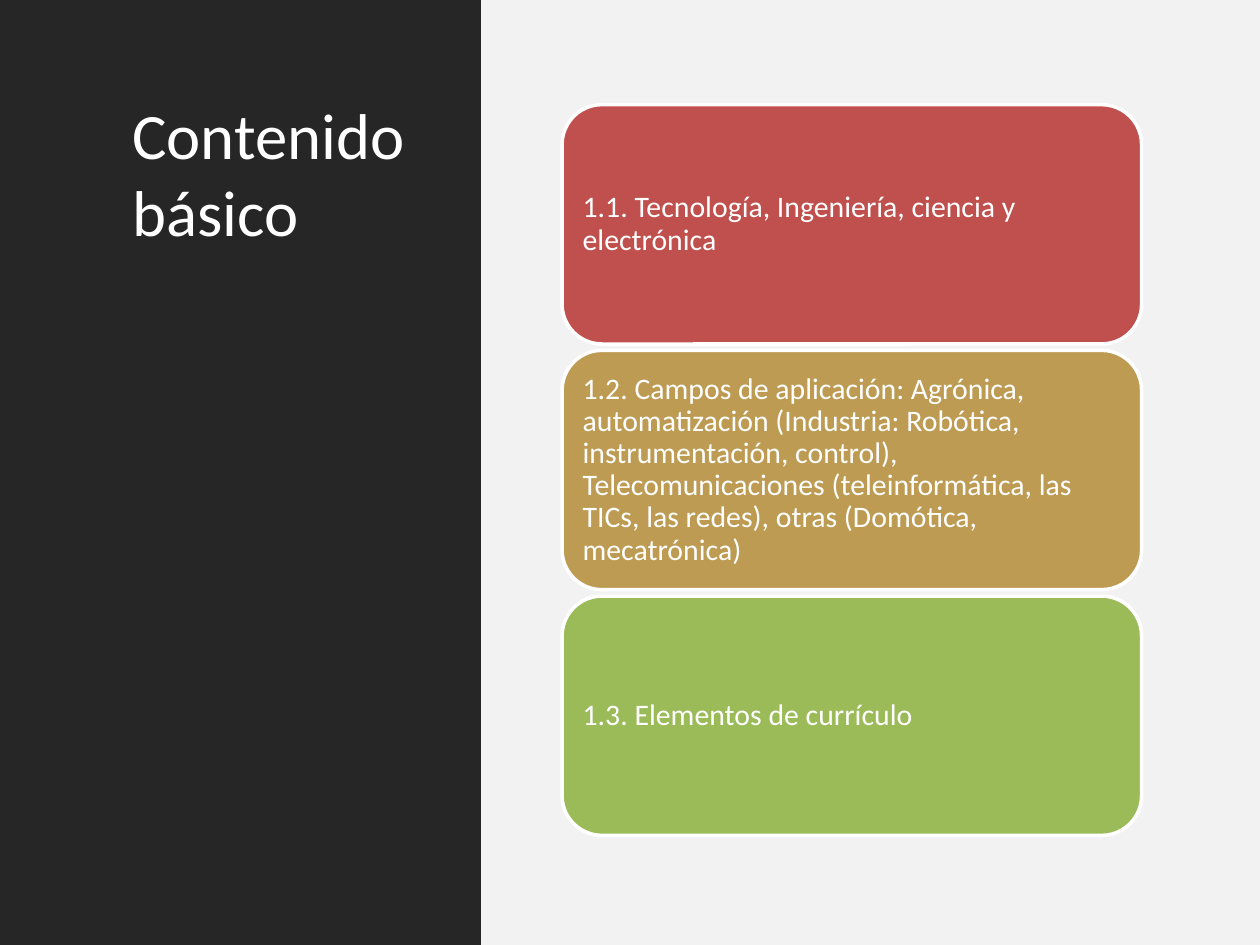
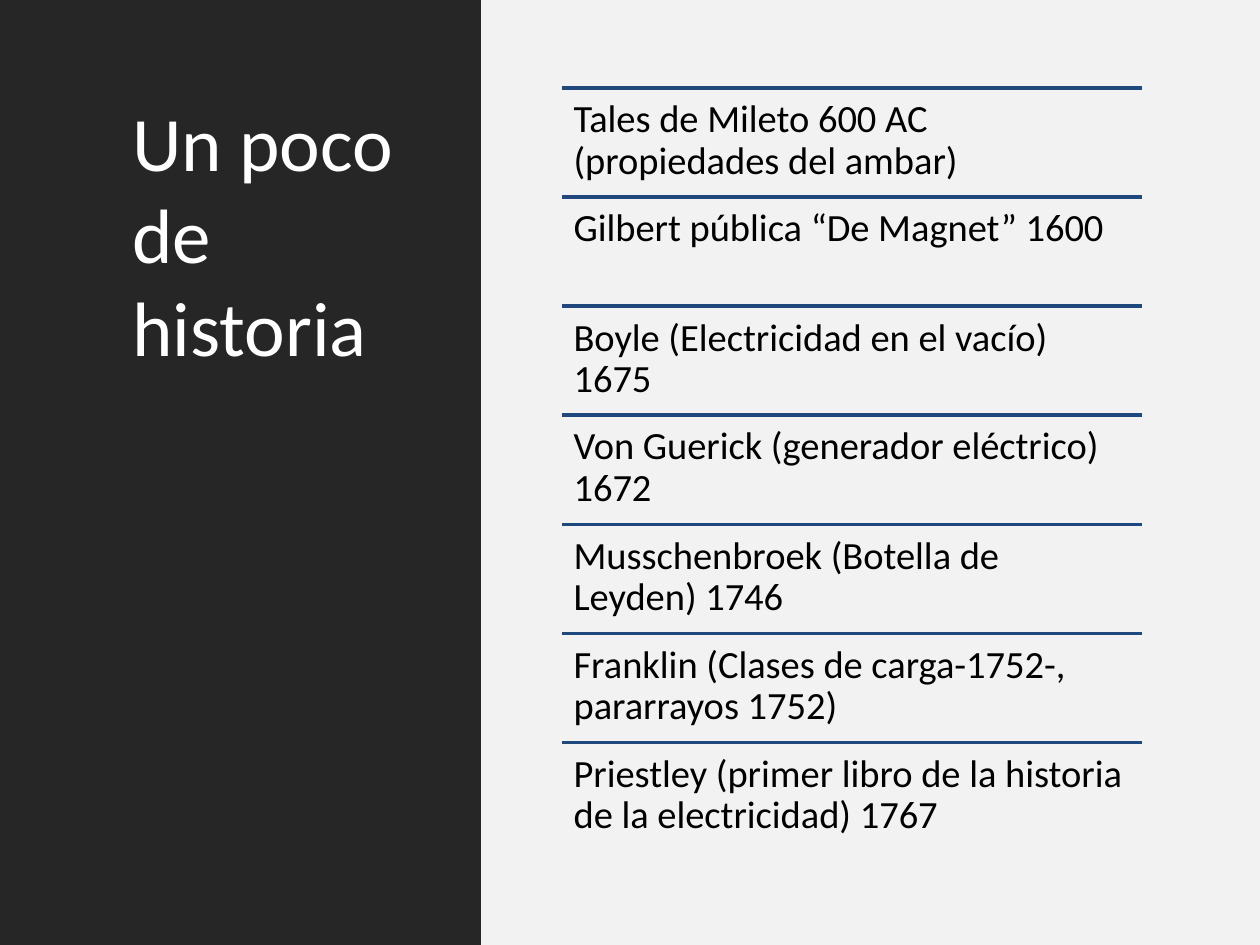
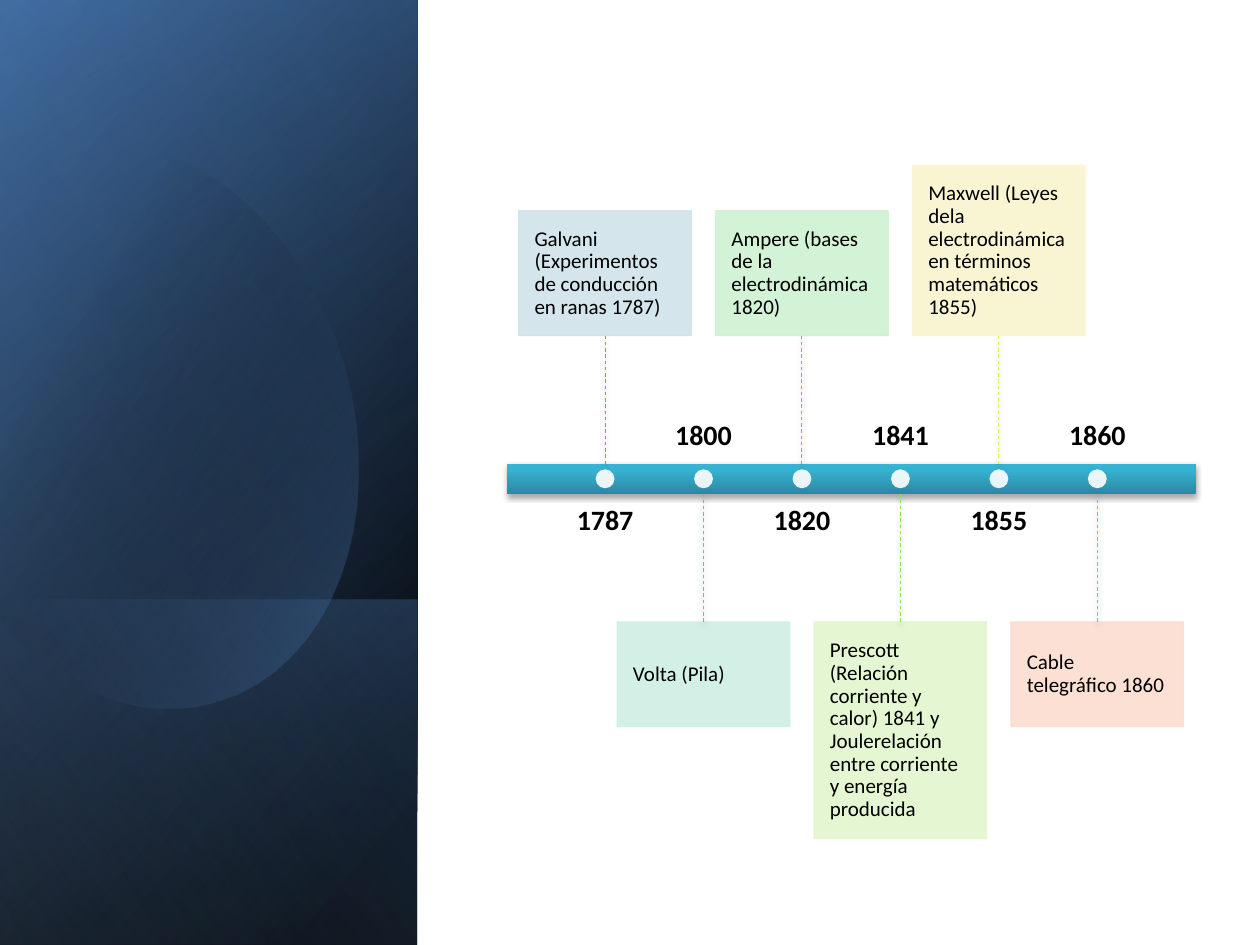
from collections import namedtuple

from lxml import etree
from pptx import Presentation
from pptx.dml.color import RGBColor
from pptx.enum.dml import MSO_LINE
from pptx.enum.shapes import MSO_CONNECTOR, MSO_SHAPE
from pptx.enum.text import MSO_ANCHOR, MSO_AUTO_SIZE, PP_ALIGN
from pptx.oxml.ns import qn
from pptx.util import Pt

RECTANGLE = MSO_SHAPE.RECTANGLE
ROUNDED = MSO_SHAPE.ROUNDED_RECTANGLE
OVAL = MSO_SHAPE.OVAL
STRAIGHT = MSO_CONNECTOR.STRAIGHT
DASH = MSO_LINE.DASH
TOP, MIDDLE, BOTTOM = MSO_ANCHOR.TOP, MSO_ANCHOR.MIDDLE, MSO_ANCHOR.BOTTOM
LEFT, CENTER = PP_ALIGN.LEFT, PP_ALIGN.CENTER
NO_AUTOFIT = MSO_AUTO_SIZE.NONE

Box = namedtuple("Box", "left top width height")

FONT = "Calibri"
BLACK, WHITE = "000000", "FFFFFF"
DARK, PALE, NAVY, BLUE = "262626", "F2F2F2", "1F497D", "4F81BD"
TITLE_ONLY, BLANK = 5, 6

WIDTH, HEIGHT = 720, 540
BAND_WIDTH = 275
TITLE_BOX = Box(68.4, 50.4, 171.4, 439.2)
CARDS_BOX = Box(321.2, 59.8, 331.2, 417.6)
HISTORY_BOX = Box(321.2, 50.4, 331.2, 436.1)
SIDE_BOX = Box(0, 0, 238.5, HEIGHT)
AXIS_BOX = Box(289.5, 265, 393.8, 17.2)

CARDS = [
    ("1.1. Tecnología, Ingeniería, ciencia y electrónica", "C0504D"),
    ("1.2. Campos de aplicación: Agrónica, automatización (Industria: Robótica, "
     "instrumentación, control), Telecomunicaciones (teleinformática, las TICs, "
     "las redes), otras (Domótica, mecatrónica)", "BD9B53"),
    ("1.3. Elementos de currículo", "9BBB59"),
]
HISTORY = [
    "Tales de Mileto 600 AC (propiedades del ambar)",
    "Gilbert pública “De Magnet” 1600",
    "Boyle (Electricidad en el vacío) 1675",
    "Von Guerick (generador eléctrico) 1672",
    "Musschenbroek (Botella de Leyden) 1746",
    "Franklin (Clases de carga-1752-, pararrayos 1752)",
    "Priestley (primer libro de la historia de la electricidad) 1767",
]
EVENTS = [
    ("1787", "Galvani (Experimentos de conducción en ranas 1787)", 71.3, "D0E3EA", "4BACC6"),
    ("1800", "Volta (Pila)", 59.8, "CFEFE5", "49D1A3"),
    ("1820", "Ampere (bases de la electrodinámica 1820)", 71.3, "CFF2D2", "47DC57"),
    ("1841", "Prescott (Relación corriente y calor) 1841 y Joulerelación entre "
             "corriente y energía producida", 123.8, "E2F6CE", "8DE646"),
    ("1855", "Maxwell (Leyes dela electrodinámica en términos matemáticos 1855)",
     97.2, "F9F5CF", "EEEF46"),
    ("1860", "Cable telegráfico 1860", 59.8, "FCDDCF", "F79646"),
]
SWOOSH_START = (69, 82)
SWOOSH_CURVES = [
    ((123, 88), (176, 138), (196.5, 209)),
    ((221, 297), (189, 382), (123, 401)),
    ((82, 413), (38, 396), (5, 360)),
    ((5, 360), (-2, 351), (-2, 351)),
    ((-2, 351), (-18, 119.5), (-18, 119.5)),
    ((-18, 119.5), (-11, 111), (-11, 111)),
    ((1.5, 98.5), (16, 90), (32.5, 85)),
    ((44.5, 81.5), (57, 81), (69, 82)),
]


def color(value):
    return RGBColor.from_string(value)


def lengths(box):
    return [Pt(value) for value in box]


def add_alpha(color_element, percent):
    etree.SubElement(color_element, qn("a:alpha"), val=str(percent * 1000))


def add_effects(shape):
    return etree.SubElement(shape.element.spPr, qn("a:effectLst"))


def add_soft_shadow(shape):
    shadow = etree.SubElement(add_effects(shape), qn("a:outerShdw"), blurRad=str(Pt(3.1)),
                              dist=str(Pt(1.8)), dir="5400000", rotWithShape="0")
    add_alpha(etree.SubElement(shadow, qn("a:srgbClr"), val=BLACK), 35)


def fill_gradient(shape, angle, stops):
    shape.fill.gradient()
    shape.fill.gradient_angle = (360 - angle) % 360
    stop_list = shape.element.spPr.find(".//" + qn("a:gsLst"))
    for old_stop in list(stop_list):
        stop_list.remove(old_stop)
    for position, value, alpha in stops:
        stop = etree.SubElement(stop_list, qn("a:gs"), pos=str(position * 1000))
        add_alpha(etree.SubElement(stop, qn("a:srgbClr"), val=value), alpha)


def add_block(slide, kind, box, fill, line=None, line_width=0.75, alpha=100):
    shape = slide.shapes.add_shape(kind, *lengths(box))
    shape.fill.solid()
    shape.fill.fore_color.rgb = color(fill)
    if line:
        shape.line.color.rgb = color(line)
        shape.line.width = Pt(line_width)
    else:
        shape.line.fill.background()
    if alpha < 100:
        for color_element in shape.element.spPr.iter(qn("a:srgbClr")):
            add_alpha(color_element, alpha)
    shape.shadow.inherit = False
    return shape


def add_line(slide, start, end, value, width):
    points = [Pt(value) for value in start + end]
    line = slide.shapes.add_connector(STRAIGHT, *points)
    line.line.color.rgb = color(value)
    line.line.width = Pt(width)
    return line


def write(shape, text, size, value=BLACK, inset=0, anchor=TOP, align=LEFT, bold=False, spacing=0.9):
    frame = shape.text_frame
    frame.word_wrap = True
    frame.auto_size = NO_AUTOFIT
    frame.vertical_anchor = anchor
    frame.margin_left = frame.margin_right = Pt(inset)
    frame.margin_top = frame.margin_bottom = Pt(inset)
    paragraph = frame.paragraphs[0]
    paragraph.alignment = align
    paragraph.line_spacing = spacing
    run = paragraph.add_run()
    run.text = text
    run.font.name = FONT
    run.font.size = Pt(size)
    run.font.bold = bold
    run.font.color.rgb = color(value)


def add_text(slide, box, text, size, **style):
    write(slide.shapes.add_textbox(*lengths(box)), text, size, **style)


def add_banded_slide(presentation, title, size):
    slide = presentation.slides.add_slide(presentation.slide_layouts[TITLE_ONLY])
    add_block(slide, RECTANGLE, Box(0, 0, BAND_WIDTH, HEIGHT), DARK)
    add_block(slide, RECTANGLE, Box(BAND_WIDTH, 0, WIDTH - BAND_WIDTH, HEIGHT), PALE)
    shape = slide.shapes.title
    shape.left, shape.top, shape.width, shape.height = lengths(TITLE_BOX)
    write(shape, title, size, WHITE, inset=7.2, spacing=1.0)
    frame = shape.text_frame
    frame.margin_top = frame.margin_bottom = Pt(3.6)
    shape.element.getparent().append(shape.element)
    return slide


def add_cards(slide, box, cards):
    gap = 3.6
    height = (box.height - gap * (len(cards) - 1)) / len(cards)
    for index, (text, fill) in enumerate(cards):
        card_box = Box(box.left, box.top + index * (height + gap), box.width, height)
        card = add_block(slide, ROUNDED, card_box, fill, WHITE, 2)
        write(card, text, 17, WHITE, inset=5.1, anchor=MIDDLE)


def add_ruled_list(slide, box, entries):
    height = box.height / len(entries)
    for index, text in enumerate(entries):
        top = box.top + index * height
        rule = add_line(slide, (box.left, top), (box.left + box.width, top), NAVY, 2)
        add_effects(rule)
        add_text(slide, Box(box.left, top, box.width, height), text, 22, inset=6.6)


def add_turned_panel(slide, box, angle, stops):
    left = box.left + (box.width - box.height) / 2
    top = box.top + (box.height - box.width) / 2
    panel = add_block(slide, RECTANGLE, Box(left, top, box.height, box.width), BLACK)
    panel.rotation = 90
    panel.element.spPr.find(qn("a:xfrm")).set("flipH", "1")
    fill_gradient(panel, angle, stops)


def curve_points(start, curves, steps=16):
    points = []
    for first, second, end in curves:
        for step in range(1, steps + 1):
            t = step / steps
            weights = ((1 - t) ** 3, 3 * t * (1 - t) ** 2, 3 * t ** 2 * (1 - t), t ** 3)
            corners = (start, first, second, end)
            points.append(tuple(Pt(sum(weight * corner[axis]
                                       for weight, corner in zip(weights, corners)))
                                for axis in (0, 1)))
        start = end
    return points


def add_swoosh(slide, box):
    builder = slide.shapes.build_freeform(*[Pt(value) for value in SWOOSH_START])
    builder.add_line_segments(curve_points(SWOOSH_START, SWOOSH_CURVES), close=True)
    swoosh = builder.convert_to_shape(Pt(box.left), Pt(box.top))
    fill_gradient(swoosh, 30, [(29, BLACK, 0), (100, BLUE, 43)])
    swoosh.line.fill.background()
    swoosh.shadow.inherit = False


def add_side_panel(slide, box):
    foot_height = 197.3
    foot = Box(box.left, box.top + box.height - foot_height, box.width, foot_height)
    add_turned_panel(slide, box, 50, [(8, BLACK, 100), (100, "376092", 100)])
    add_turned_panel(slide, box, 30, [(0, BLACK, 0), (99, BLUE, 46)])
    add_turned_panel(slide, foot, 130, [(2, BLUE, 29), (100, BLACK, 30)])
    add_swoosh(slide, box)
    add_turned_panel(slide, box, 120, [(0, BLACK, 0), (99, "95B3D7", 11)])


def add_timeline(slide, box, events):
    reach, callout_width, dot = 73.2, 98.6, 10.8
    year_width, year_height, year_gap = 90, 48, 7.2
    axis = slide.shapes.add_shape(RECTANGLE, *lengths(box))
    fill_gradient(axis, 270, [(0, "2A88A2", 100), (80, "37B1D2", 100), (100, "34B4D6", 100)])
    axis.line.fill.background()
    add_soft_shadow(axis)
    step = box.width / (len(events) + 1)
    bottom = box.top + box.height
    for index, (year, text, height, fill, line) in enumerate(events):
        center = box.left + (index + 1) * step
        if index % 2:
            edge, callout_edge = bottom, bottom + reach
            callout_top = callout_edge
            year_top, year_anchor = box.top - year_gap - year_height, BOTTOM
        else:
            edge, callout_edge = box.top, box.top - reach
            callout_top = callout_edge - height
            year_top, year_anchor = bottom + year_gap, TOP
        add_text(slide, Box(center - year_width / 2, year_top, year_width, year_height),
                 year, 16, anchor=year_anchor, align=CENTER, bold=True)
        callout_box = Box(center - callout_width / 2, callout_top, callout_width, height)
        callout = add_block(slide, RECTANGLE, callout_box, fill, fill, alpha=90)
        write(callout, text, 12, inset=9, anchor=MIDDLE)
        stem = add_line(slide, (center, callout_edge), (center, edge), line, 0.5)
        stem.line.dash_style = DASH
        add_soft_shadow(stem)
        dot_top = box.top + (box.height - dot) / 2
        add_block(slide, OVAL, Box(center - dot / 2, dot_top, dot, dot), WHITE, alpha=90)


def main():
    presentation = Presentation()
    presentation.slide_width, presentation.slide_height = Pt(WIDTH), Pt(HEIGHT)

    add_cards(add_banded_slide(presentation, "Contenido básico", 37), CARDS_BOX, CARDS)
    add_ruled_list(add_banded_slide(presentation, "Un poco de historia", 44), HISTORY_BOX, HISTORY)

    slide = presentation.slides.add_slide(presentation.slide_layouts[BLANK])
    add_side_panel(slide, SIDE_BOX)
    add_timeline(slide, AXIS_BOX, EVENTS)

    presentation.save("out.pptx")


if __name__ == "__main__":
    main()
